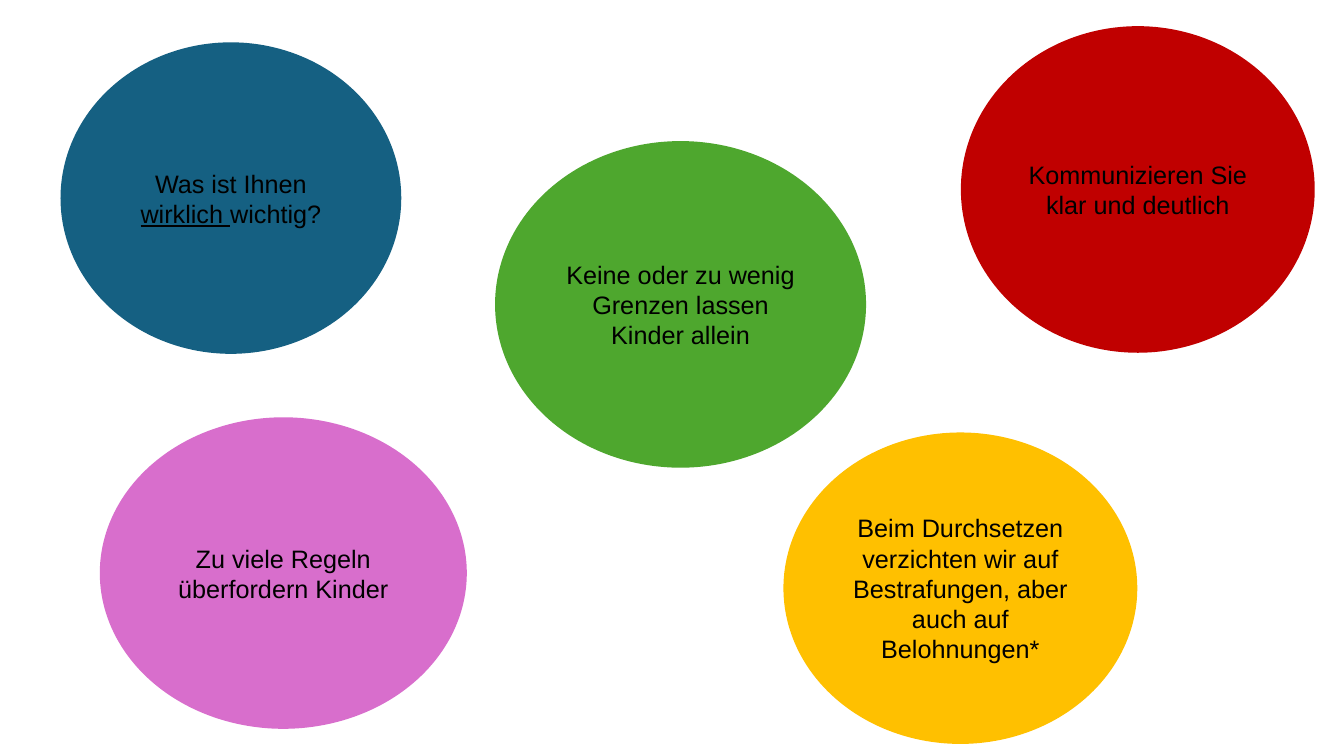
from pptx import Presentation
from pptx.dml.color import RGBColor
from pptx.enum.shapes import MSO_SHAPE as Shape
from pptx.enum.text import MSO_ANCHOR as Anchor, PP_ALIGN as Align
from pptx.util import Inches, Pt

WIDTH, HEIGHT = 13.33, 7.5

# Box (left, top, width, height in inches), fill, text runs; odd runs are underlined
BUBBLES = [
    ((0.6, 0.42, 3.38, 3.09), "156082",
     ["Was ist Ihnen ", "wirklich ", "wichtig?"]),
    ((0.99, 4.14, 3.64, 3.09), "D86ECC",
     ["Zu viele Regeln überfordern Kinder"]),
    ((4.91, 1.4, 3.68, 3.24), "4EA72E",
     ["Keine oder zu wenig Grenzen lassen Kinder allein"]),
    ((7.77, 4.29, 3.51, 3.09), "FFC000",
     ["Beim Durchsetzen verzichten wir auf Bestrafungen, "
      "aber auch auf Belohnungen*"]),
    ((9.53, 0.26, 3.51, 3.24), "C00000",
     ["Kommunizieren Sie klar und deutlich"]),
]


def paint(color, code):
    color.rgb = RGBColor.from_string(code)


def add_bubble(slide, box, fill, parts):
    bubble = slide.shapes.add_shape(
        Shape.FLOWCHART_CONNECTOR, *map(Inches, box))
    bubble.shadow.inherit = False
    bubble.fill.solid()
    paint(bubble.fill.fore_color, fill)
    bubble.line.fill.background()

    frame = bubble.text_frame
    frame.word_wrap = True
    frame.vertical_anchor = Anchor.MIDDLE
    para = frame.paragraphs[0]
    para.alignment = Align.CENTER
    for i, part in enumerate(parts):
        run = para.add_run()
        run.text = part
        run.font.name = "Arial"
        run.font.size = Pt(18)
        run.font.underline = i % 2 == 1
        paint(run.font.color, "000000")


def main():
    deck = Presentation()
    deck.slide_width, deck.slide_height = Inches(WIDTH), Inches(HEIGHT)
    slide = deck.slides.add_slide(deck.slide_layouts[6])
    for box, fill, parts in BUBBLES:
        add_bubble(slide, box, fill, parts)
    deck.save("out.pptx")


if __name__ == "__main__":
    main()
